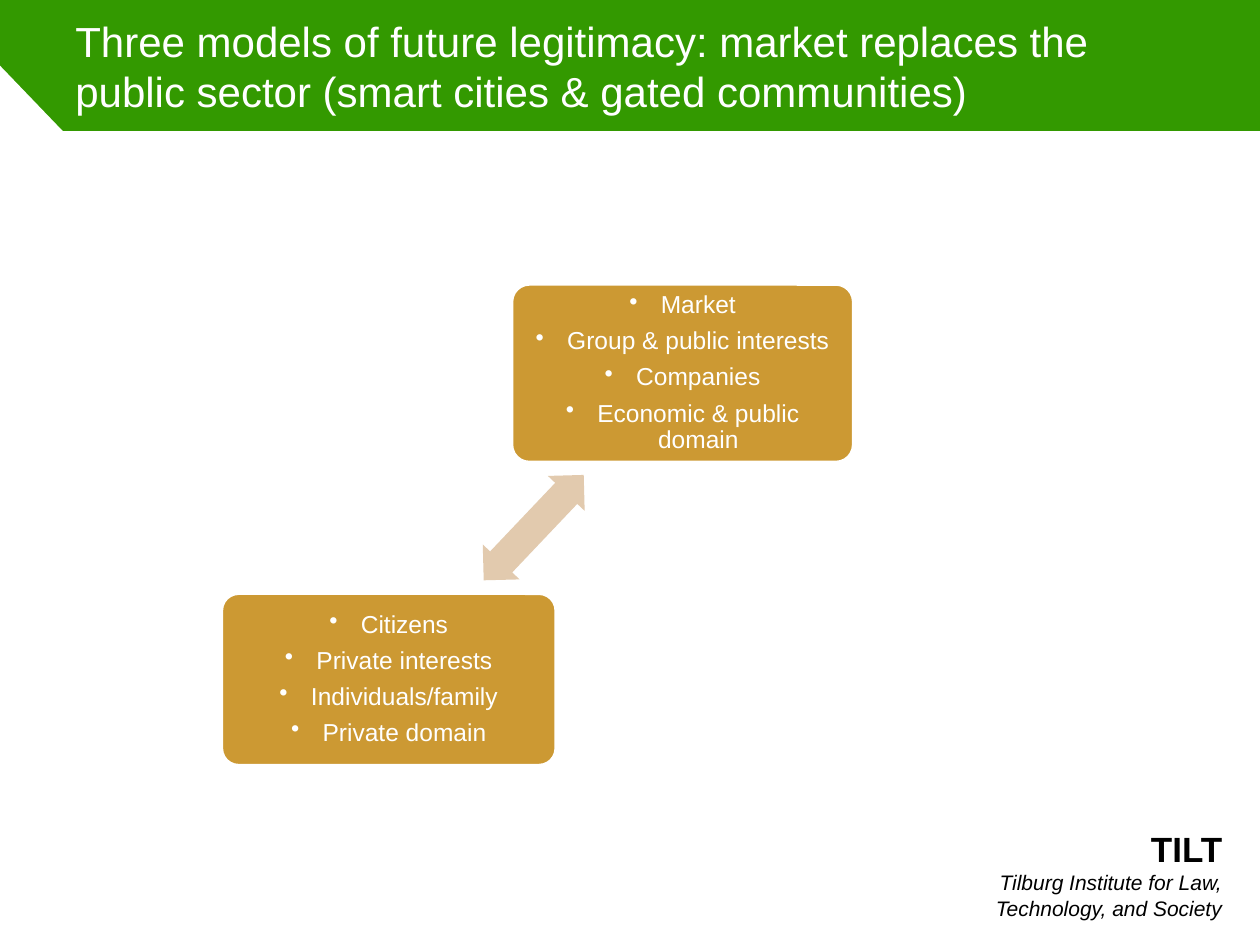
from dataclasses import dataclass

import lxml.etree
import pptx
import pptx.dml.color
import pptx.enum.shapes
import pptx.enum.text
import pptx.oxml.ns
import pptx.util

Pt = pptx.util.Pt
Align = pptx.enum.text.PP_ALIGN
Anchor = pptx.enum.text.MSO_ANCHOR
Shape = pptx.enum.shapes.MSO_SHAPE


@dataclass(frozen=True)
class Theme:
    font: str = "Arial"
    green: str = "339900"
    white: str = "FFFFFF"
    black: str = "000000"
    gold: str = "CC9933"
    sand: str = "E2CAAE"
    title_size: int = 24
    name_size: int = 20
    body_size: int = 14
    caption_size: int = 12


THEME = Theme()
SLIDE_WIDTH, SLIDE_HEIGHT = 720, 540
BAND_HEIGHT = 75


def rgb(value):
    return pptx.dml.color.RGBColor.from_string(value)


def write(paragraph, text, size, color=THEME.white, bold=False, italic=False):
    run = paragraph.add_run()
    run.text = text
    font = run.font
    font.name, font.size, font.bold, font.italic = THEME.font, Pt(size), bold, italic
    font.color.rgb = rgb(color)


def add_bullet(paragraph, indent=18):
    properties = paragraph._p.get_or_add_pPr()
    properties.set("marL", str(Pt(indent)))
    properties.set("indent", str(-Pt(indent)))
    bullet = lxml.etree.SubElement(properties, pptx.oxml.ns.qn("a:buChar"))
    bullet.set("char", "•")


def add_text_frame(slide, box, anchor):
    frame = slide.shapes.add_textbox(*map(Pt, box)).text_frame
    frame.word_wrap = True
    frame.vertical_anchor = anchor
    return frame


def add_filled_shape(slide, kind, box, fill, adjustments):
    shape = slide.shapes.add_shape(kind, *map(Pt, box))
    shape.shadow.inherit = False
    shape.fill.solid()
    shape.fill.fore_color.rgb = rgb(fill)
    shape.line.fill.background()
    for index, value in enumerate(adjustments):
        shape.adjustments[index] = value
    return shape


def add_page(slide, box):
    """White page with a cut corner, leaving the green title band above."""
    left, top, width, height = box
    right, bottom, cut = left + width, top + height, 36
    outline = [(left, top - cut - 1.5), (left, bottom), (right, bottom), (right, top)]
    builder = slide.shapes.build_freeform(Pt(left + cut), Pt(top))
    builder.add_line_segments([(Pt(x), Pt(y)) for x, y in outline], close=True)
    page = builder.convert_to_shape()
    page.shadow.inherit = False
    page.fill.solid()
    page.fill.fore_color.rgb = rgb(THEME.white)
    page.line.fill.background()


def add_title(slide, box, text):
    frame = add_text_frame(slide, box, Anchor.MIDDLE)
    write(frame.paragraphs[0], text, size=THEME.title_size)


def add_institute(slide, box, name, caption):
    paragraph = add_text_frame(slide, box, Anchor.BOTTOM).paragraphs[0]
    paragraph.alignment = Align.RIGHT
    write(paragraph, name, size=THEME.name_size, color=THEME.black, bold=True)
    paragraph.add_line_break()
    write(paragraph, caption, size=THEME.caption_size, color=THEME.black, italic=True)


def add_sector(slide, box, points):
    """Rounded card with a centred bullet list."""
    card = add_filled_shape(slide, Shape.ROUNDED_RECTANGLE, box, THEME.gold, [0.1])
    card.line.color.rgb = rgb(THEME.white)
    card.line.width = Pt(2)
    frame = card.text_frame
    frame.word_wrap = True
    frame.vertical_anchor = Anchor.MIDDLE
    frame.margin_left = frame.margin_right = Pt(4.5)
    frame.margin_top = frame.margin_bottom = Pt(4.5)
    for index, point in enumerate(points):
        paragraph = frame.add_paragraph() if index else frame.paragraphs[0]
        paragraph.alignment = Align.CENTER
        paragraph.line_spacing = 0.9
        paragraph.space_after = Pt(5.5)
        add_bullet(paragraph)
        write(paragraph, point, size=THEME.body_size)


def add_exchange_arrow(slide, box, rotation):
    arrow = add_filled_shape(slide, Shape.LEFT_RIGHT_ARROW, box, THEME.sand, [0.6, 0.5])
    arrow.rotation = rotation


def main():
    presentation = pptx.Presentation()
    presentation.slide_width = Pt(SLIDE_WIDTH)
    presentation.slide_height = Pt(SLIDE_HEIGHT)
    slide = presentation.slides.add_slide(presentation.slide_layouts[6])
    slide.background.fill.solid()
    slide.background.fill.fore_color.rgb = rgb(THEME.green)

    # Page, title band and institute
    add_page(slide, (0, BAND_HEIGHT, SLIDE_WIDTH, SLIDE_HEIGHT - BAND_HEIGHT))
    add_title(slide, (36, 0, 648, BAND_HEIGHT),
              "Three models of future legitimacy: market replaces the "
              "public sector (smart cities & gated communities)")
    add_institute(slide, (524, 469, 181.5, 60.5), "TILT",
                  "Tilburg Institute for Law, Technology, and Society")

    # Market and citizens, joined by a two-way arrow
    add_sector(slide, (292.3, 162.3, 195.5, 102),
               ["Market", "Group & public interests", "Companies",
                "Economic & public domain"])
    add_sector(slide, (126.5, 339, 191.3, 98.5),
               ["Citizens", "Private interests", "Individuals/family",
                "Private domain"])
    add_exchange_arrow(slide, (263.5, 287, 83, 29), rotation=313.5)

    presentation.save("out.pptx")


if __name__ == "__main__":
    main()
